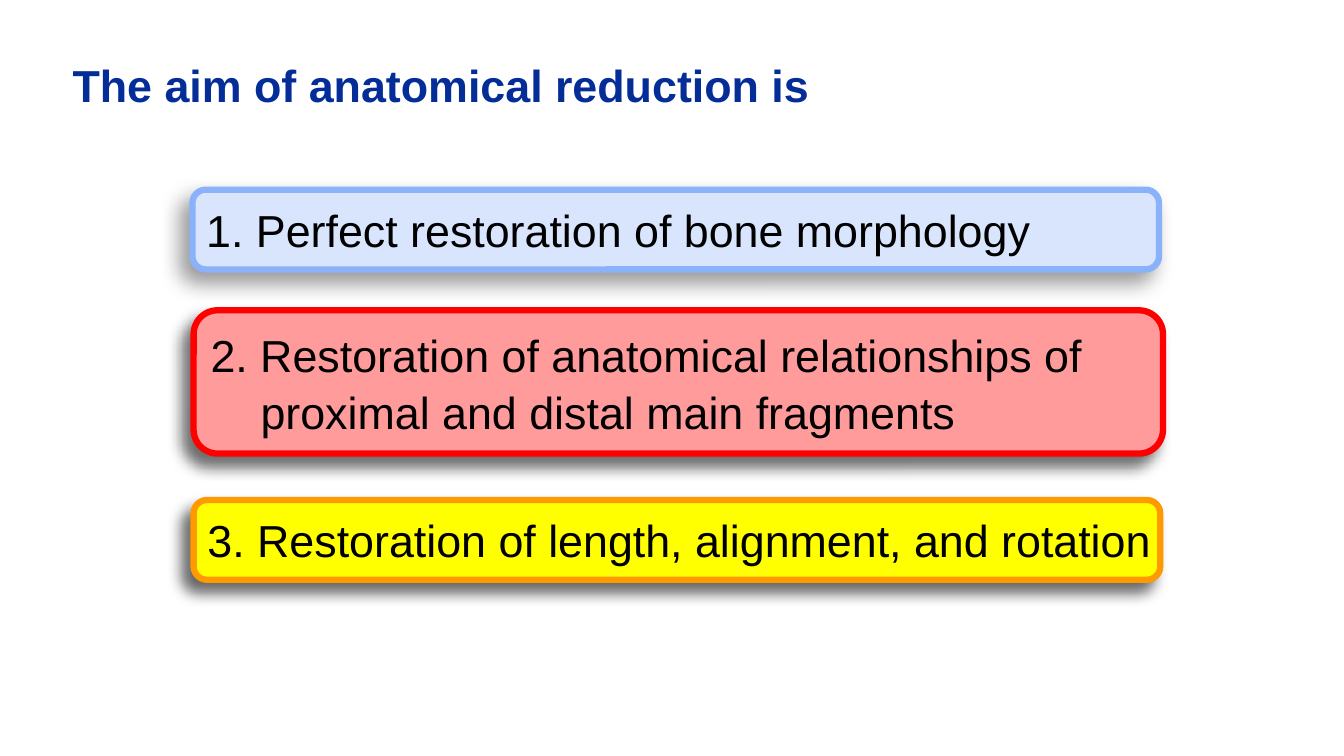
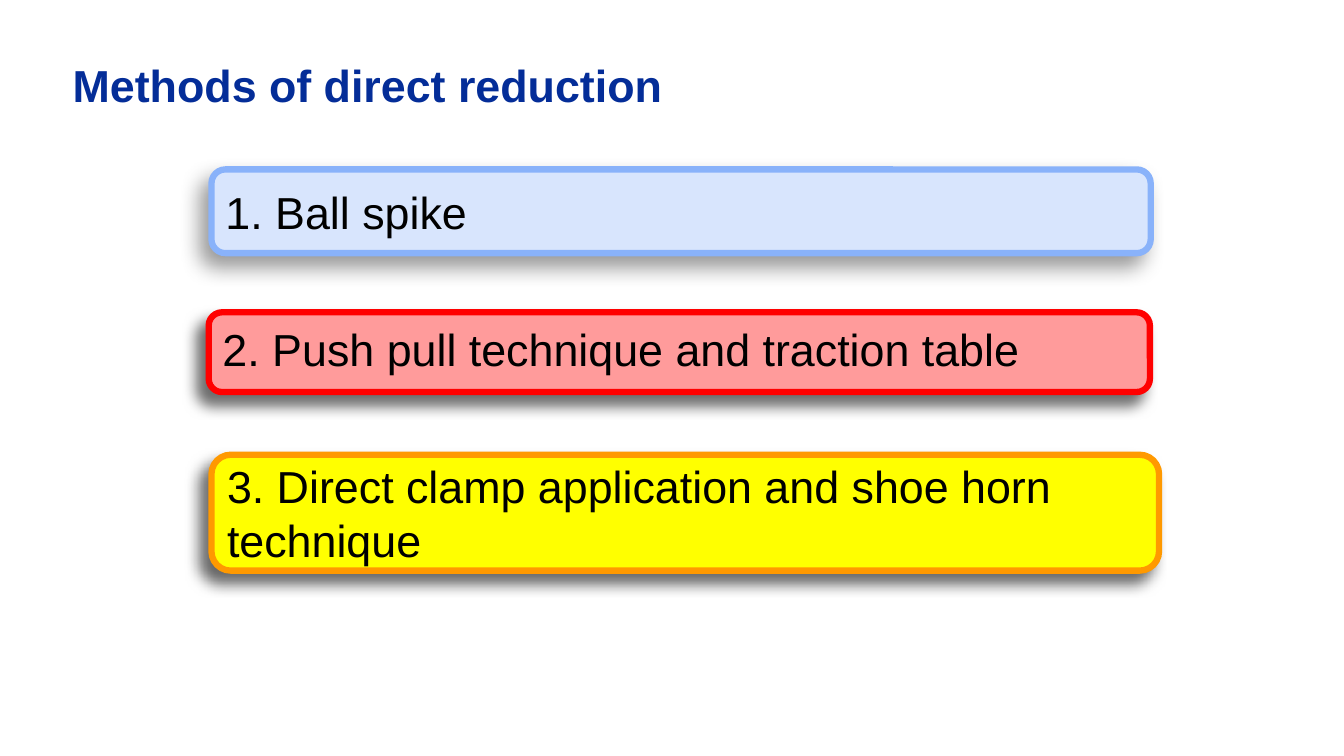
from lxml.etree import SubElement
from pptx import Presentation
from pptx.dml.color import RGBColor
from pptx.enum.shapes import MSO_SHAPE
from pptx.enum.text import MSO_ANCHOR, PP_ALIGN
from pptx.oxml.ns import qn
from pptx.util import Cm, Pt

COLORS = {
    "title": "042D98", "text": "000000", "shadow": "000000",
    "blue": "D8E5FD", "blue_edge": "89B2FA",
    "red": "FF9B9B", "red_edge": "FF0000",
    "gold": "FFFF00", "gold_edge": "FF9900",
}
BODY = {"name": "Arial", "size": Pt(32), "bold": False}
HEAD = {**BODY, "bold": True}
ZERO = {f"margin_{side}": 0 for side in ("left", "top", "right", "bottom")}
# Shadow of each card colour: opacity in percent, blur in points
SHADES = {"blue": (40, 15), "red": (56, 10), "gold": (58, 10)}

# Title, then cards: colour, box in cm, text, paragraph format, hang in cm
SLIDES = [
    ("The aim of anatomical reduction is", [
        ("blue", (4.85, 4.78, 24.36, 2.01),
         "1. Perfect restoration of bone morphology", {}, 0),
        ("red", (4.88, 7.82, 24.43, 3.61),
         "2. Restoration of anatomical relationships of\v"
         "proximal and distal main fragments", {"line_spacing": 1.05}, 1.26),
        ("gold", (4.88, 12.6, 24.36, 2.01),
         "3. Restoration of length, alignment, and rotation", {}, 0),
    ]),
    ("Methods of direct reduction", [
        ("blue", (5.33, 4.27, 23.67, 2.11), "1. Ball spike", {}, 0),
        ("red", (5.26, 7.87, 23.72, 2.01),
         "2. Push pull technique and traction table",
         {"line_spacing": 0.9}, 0),
        ("gold", (5.33, 11.46, 23.88, 2.92),
         "3. Direct clamp application and shoe horn\vtechnique", {}, 0),
    ]),
]


def color(name):
    return RGBColor.from_string(COLORS[name])


def apply(item, values):
    for key, value in values.items():
        setattr(item, key, value)


def write(frame, text, font, tone, form, hang=0):
    """Fill the first paragraph; later lines start at hang (cm)."""
    para = frame.paragraphs[0]
    para.text = text
    apply(para, {"alignment": PP_ALIGN.LEFT, **form})
    if hang:
        props = para._p.get_or_add_pPr()
        props.set("marL", str(Cm(hang)))
        props.set("indent", str(-Cm(hang)))
    for run in para.runs:
        apply(run.font, font)
        run.font.color.rgb = color(tone)


def add_title(slide, text):
    box = slide.shapes.add_textbox(Cm(1.83), Cm(1.45), Cm(30.2), Cm(2.69))
    apply(box.text_frame, {"word_wrap": True, **ZERO})
    write(box.text_frame, text, HEAD, "title", {})


def cast(shape, alpha, blur):
    """Give the shape a soft shadow to the lower left."""
    shape.shadow.inherit = False
    effects = shape._element.spPr.find(qn("a:effectLst"))
    outer = SubElement(effects, qn("a:outerShdw"), {
        "blurRad": str(Pt(blur)), "dist": str(Pt(10)),
        "dir": str(135 * 60000), "algn": "tr", "rotWithShape": "0"})
    tint = SubElement(outer, qn("a:srgbClr"), val=COLORS["shadow"])
    SubElement(tint, qn("a:alpha"), val=str(alpha * 1000))


def add_card(slide, tone, box, text, form, hang):
    card = slide.shapes.add_shape(
        MSO_SHAPE.ROUNDED_RECTANGLE, *map(Cm, box))
    card.fill.solid()
    card.fill.fore_color.rgb = color(tone)
    card.line.color.rgb = color(tone + "_edge")
    card.line.width = Pt(4.5)
    cast(card, *SHADES[tone])
    apply(card.text_frame, {"word_wrap": False,
                            "vertical_anchor": MSO_ANCHOR.MIDDLE})
    write(card.text_frame, text, BODY, "text", form, hang)


def main():
    deck = Presentation()
    apply(deck, {"slide_width": Cm(33.87), "slide_height": Cm(19.05)})
    for title, cards in SLIDES:
        slide = deck.slides.add_slide(deck.slide_layouts[6])
        add_title(slide, title)
        for card in cards:
            add_card(slide, *card)
    deck.save("out.pptx")


if __name__ == "__main__":
    main()
